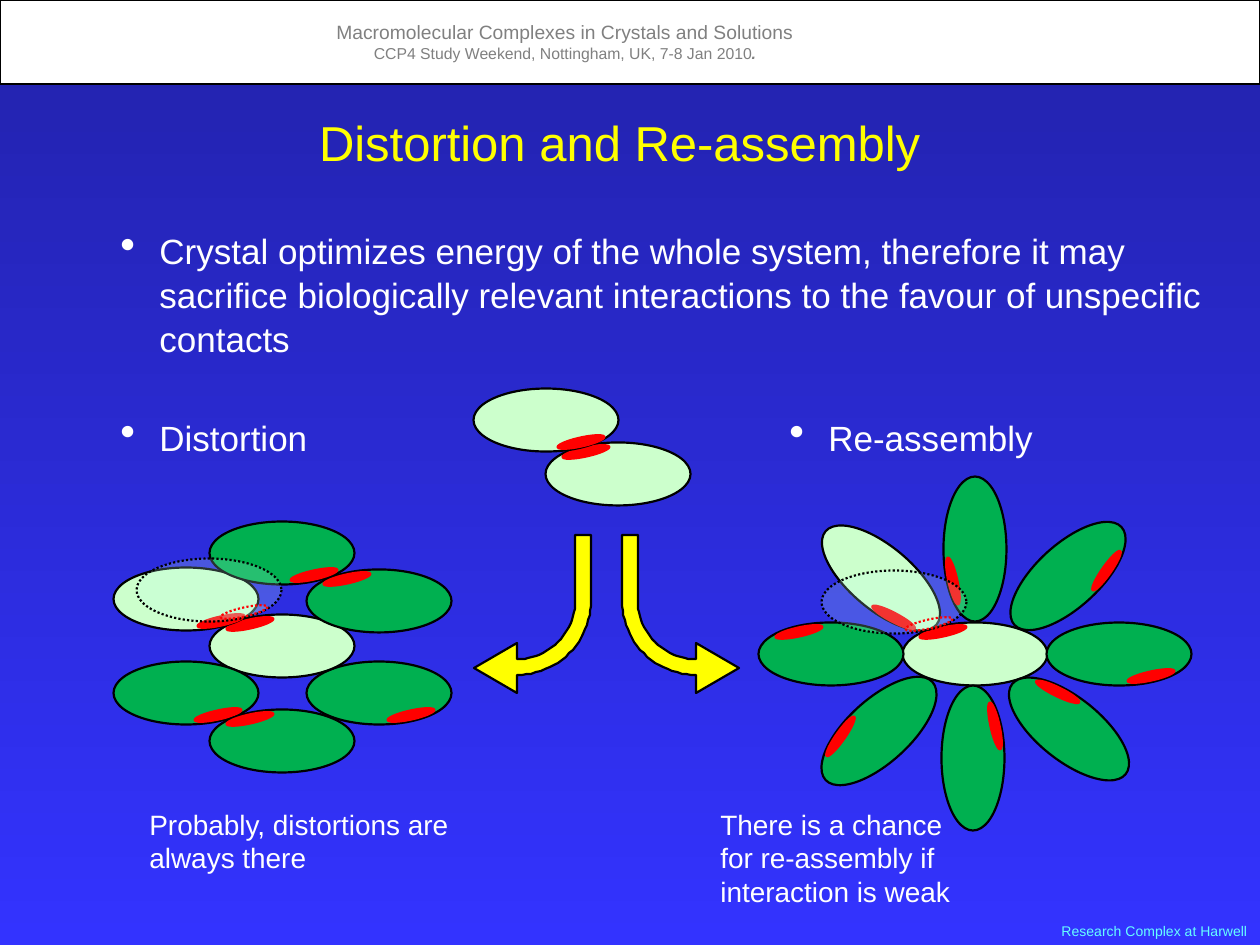
from math import cos, pi, radians, sin

from lxml.etree import SubElement
from pptx import Presentation
from pptx.dml.color import RGBColor
from pptx.enum.dml import MSO_LINE
from pptx.enum.shapes import MSO_SHAPE
from pptx.enum.text import MSO_ANCHOR, PP_ALIGN
from pptx.oxml.ns import qn
from pptx.util import Pt

PX = 914400 / 126  # EMU per px

WHITE, BLACK, RED = "FFFFFF", "000000", "FF0000"
YELLOW, PALE, GREEN, GHOST = "FFFF00", "CCFFCC", "00B050", "C2FFF0"

BODY = (145, 63)
CONTACT = (48, 9)
CONTACT_TILT = -12.5
SIDE, PARTNER = (-32, -22), (-35, -22)  # contact offset from the body centre


def px(*values):
    return [round(v * PX) for v in values]


def rgb(hex_color):
    return RGBColor.from_string(hex_color)


def paint(sp, fill, line, width=1.25, opacity=None, dotted=False):
    sp.shadow.inherit = False
    sp.fill.solid()
    sp.fill.fore_color.rgb = rgb(fill)
    sp.line.color.rgb = rgb(line)
    sp.line.width = Pt(width)
    if dotted:
        sp.line.dash_style = MSO_LINE.ROUND_DOT
    if opacity is not None:
        color = sp.fill._xPr.find(qn("a:solidFill"))[0]
        SubElement(color, qn("a:alpha"), val=str(opacity * 1000))


def add_bullet(p):
    pPr = p._p.get_or_add_pPr()
    pPr.set("marL", str(px(39)[0]))
    pPr.set("indent", str(px(-39)[0]))
    SubElement(pPr, qn("a:buSzPct"), val="125000")
    SubElement(pPr, qn("a:buChar"), char="•")


def write(p, text, size=20, color=WHITE, align=PP_ALIGN.LEFT, bullet=False,
          bold=None, italic=None):
    if bullet:
        add_bullet(p)
        p.line_spacing = 1.05
    p.alignment = align
    r = p.add_run()
    r.text = text
    r.font.name = "Arial"
    r.font.size = Pt(size)
    r.font.color.rgb = rgb(color)
    r.font.bold, r.font.italic = bold, italic


def add_text(slide, box, text, **fmt):
    tf = slide.shapes.add_textbox(*px(*box)).text_frame
    tf.word_wrap = True
    write(tf.paragraphs[0], text, **fmt)
    return tf


def add_ellipse(group, center, size, angle, *colors, **style):
    (cx, cy), (w, h) = center, size
    sp = group.shapes.add_shape(MSO_SHAPE.OVAL, *px(cx - w / 2, cy - h / 2, w, h))
    sp.rotation = angle % 360
    paint(sp, *colors, **style)


def add_monomer(group, x, y, angle, fill, offset=SIDE, contact_fill=RED, **style):
    """Body with its contact patch, both turned about the body centre."""
    add_ellipse(group, (x, y), BODY, angle, fill, BLACK, **style)
    dx, dy = offset
    c, s = cos(radians(angle)), sin(radians(angle))
    patch = (x + dx * c - dy * s, y + dx * s + dy * c)
    add_ellipse(group, patch, CONTACT, angle + CONTACT_TILT, contact_fill, RED, **style)


def add_cluster(slide, monomers):
    group = slide.shapes.add_group_shape()
    for monomer in monomers:
        add_monomer(group, *monomer)


def add_ghost(slide, x, y):
    group = slide.shapes.add_group_shape()
    add_monomer(group, x, y, 180, GHOST, PARTNER, GHOST, opacity=20, dotted=True)


def add_bent_arrow(slide, cx, side):
    """Down, then round to the left (side -1) or right (side 1)."""
    top, cy, outer, inner, steps = 535, 601, 74, 58, 24

    def arc(radius):
        angles = [pi / 2 * i / steps for i in range(steps + 1)]
        return [(cx - side * radius * cos(a), cy + radius * sin(a)) for a in angles]

    head = [(cx, 693), (cx + side * 43, 668), (cx, 643)]
    points = arc(outer) + head + arc(inner)[::-1] + [(cx - side * inner, top)]
    builder = slide.shapes.build_freeform(cx - side * outer, top, scale=PX)
    builder.add_line_segments(points, close=True)
    paint(builder.convert_to_shape(), YELLOW, BLACK)


def add_frame(slide):
    # Background
    fill = slide.background.fill
    fill.gradient()
    fill.gradient_angle = 270
    for stop, color in zip(fill.gradient_stops, ("2222AA", "3333FF")):
        stop.color.rgb = rgb(color)

    # Header band and footer
    band = slide.shapes.add_shape(MSO_SHAPE.RECTANGLE, *px(0, 0, 1260, 84))
    paint(band, WHITE, BLACK, width=0.75)
    grey = dict(color="808080", align=PP_ALIGN.CENTER)
    tf = add_text(slide, (168, 14, 794, 55),
                  "Macromolecular Complexes in Crystals and Solutions", size=11, **grey)
    p = tf.add_paragraph()
    write(p, "CCP4 Study Weekend, Nottingham, UK, 7-8 Jan 2010", size=9, **grey)
    write(p, ".", size=9, bold=True, italic=True, **grey)
    add_text(slide, (1033, 916, 227, 29), "Research Complex at Harwell",
             size=8, color="66FFFF", align=PP_ALIGN.RIGHT)


def add_title(slide, text):
    title = slide.shapes.title
    title.left, title.top, title.width, title.height = px(63, 106, 1113, 72)
    tf = title.text_frame
    tf.vertical_anchor = MSO_ANCHOR.TOP
    write(tf.paragraphs[0], text, size=28, color=YELLOW, align=PP_ALIGN.CENTER)


def main():
    prs = Presentation()
    prs.slide_width, prs.slide_height = px(1260, 945)
    slide = prs.slides.add_slide(prs.slide_layouts[5])
    add_frame(slide)
    add_title(slide, "Distortion and Re-assembly")

    # Bullets and captions
    for box, text in (
        ((108, 221, 1123, 145),
         "Crystal optimizes energy of the whole system, therefore it may sacrifice "
         "biologically relevant interactions to the favour of unspecific contacts"),
        ((108, 408, 276, 57), "Distortion"),
        ((777, 408, 315, 57), "Re-assembly"),
    ):
        add_text(slide, box, text, bullet=True)
    add_text(slide, (137, 801, 344, 81), "Probably, distortions are always there", size=16)
    add_text(slide, (708, 801, 276, 113),
             "There is a chance for re-assembly if interaction is weak", size=16)

    # Free dimer
    add_cluster(slide, [(618, 474, 0, PALE), (546, 420, 180, PALE, PARTNER)])

    # Distorted dimer in the crystal
    add_cluster(slide, [
        (379, 693, 180, GREEN), (282, 646, 0, PALE), (186, 599, 180, PALE, PARTNER),
        (379, 601, 0, GREEN), (186, 693, 180, GREEN), (282, 553, 180, GREEN),
        (282, 741, 0, GREEN),
    ])

    # Re-assembled dimer in the crystal
    add_cluster(slide, [
        (975, 654, 0, PALE), (881, 578, 220.1, PALE, PARTNER), (831, 654, 0, GREEN),
        (1119, 654, 180, GREEN), (1069, 729, 38.5, GREEN), (1068, 576, 137.6, GREEN),
        (879, 731, 317.5, GREEN), (975, 549, 270, GREEN), (973, 758, 90, GREEN),
    ])

    # Arrows to the two outcomes
    add_bent_arrow(slide, 517, -1)
    add_bent_arrow(slide, 696, 1)

    # Undisturbed positions
    add_ghost(slide, 209, 590)
    add_ghost(slide, 894, 602)

    prs.save("out.pptx")


if __name__ == "__main__":
    main()
